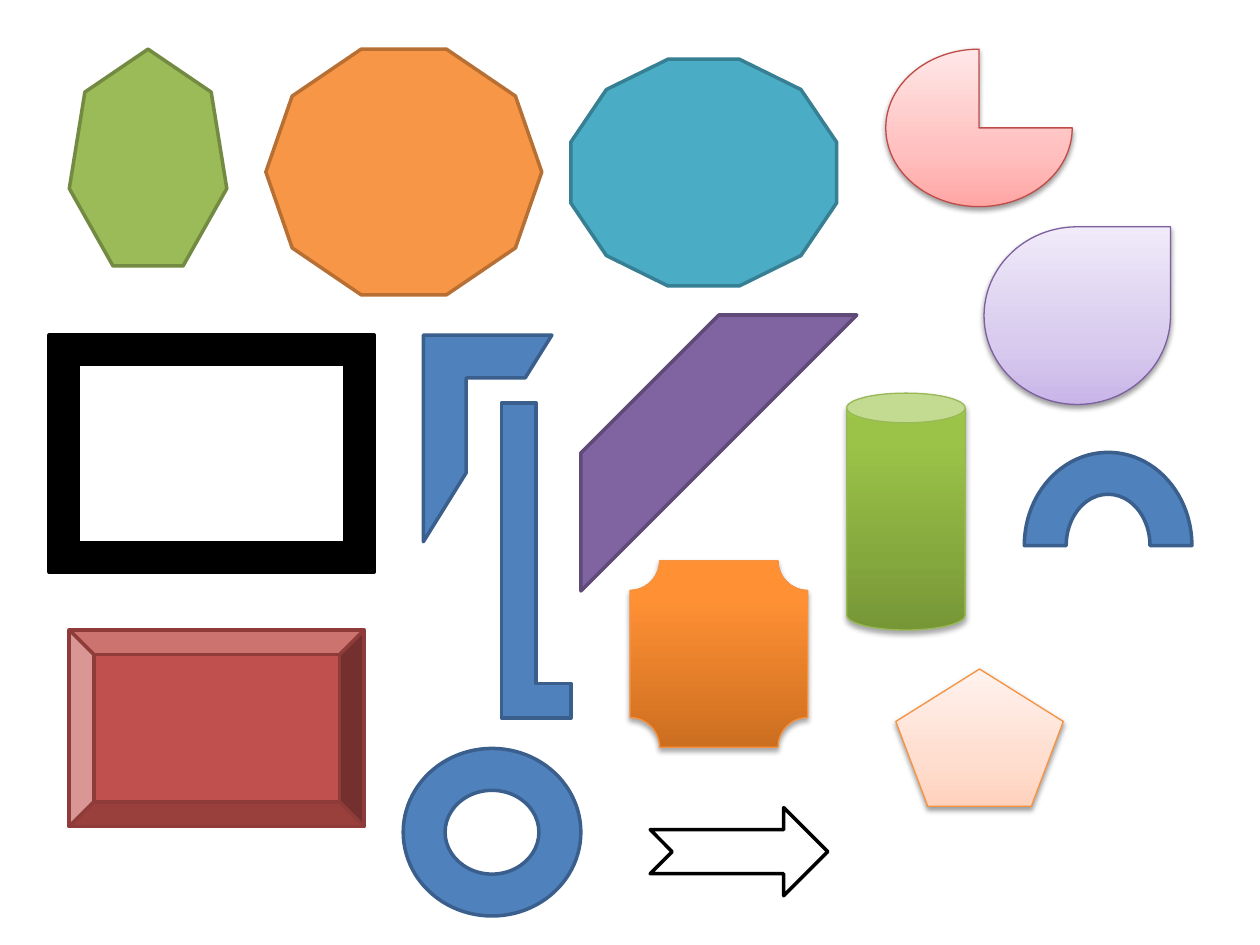
from copy import deepcopy
from dataclasses import dataclass
from typing import Optional

from lxml.etree import SubElement
from pptx import Presentation
from pptx.dml.color import RGBColor
from pptx.enum.shapes import MSO_SHAPE
from pptx.oxml.ns import qn
from pptx.util import Inches, Pt


@dataclass(frozen=True)
class Shadow:
    opacity: int  # percent
    distance: float  # points
    blur: float = 3.1  # points


@dataclass(frozen=True)
class Finish:
    """Fill stops run from bottom to top; a single stop is a solid fill."""
    stops: tuple[tuple[int, str], ...]
    line: str
    line_width: float = 2
    shadow: Optional[Shadow] = None


def solid(fill: str, line: str) -> Finish:
    return Finish(((0, fill),), line)


def subtle(bottom: str, middle: str, top: str, line: str) -> Finish:
    return Finish(((0, bottom), (35, middle), (100, top)), line, 0.75, Shadow(38, 1.6))


def intense(bottom: str, middle: str, top: str, line: str) -> Finish:
    return Finish(((0, bottom), (80, middle), (100, top)), line, 0.75, Shadow(35, 1.8))


@dataclass(frozen=True)
class Theme:
    blue: Finish = solid("4F81BD", "3A5F8C")
    red: Finish = solid("C0504D", "8E3B39")
    green: Finish = solid("9BBB59", "738A42")
    purple: Finish = solid("8064A2", "5F4A78")
    aqua: Finish = solid("4BACC6", "377F92")
    orange: Finish = solid("F79646", "B76F34")
    black: Finish = solid("000000", "000000")
    outline: Finish = solid("FFFFFF", "000000")
    soft_red: Finish = subtle("FFA6A5", "FFC0BF", "FFE7E7", "BF4C48")
    soft_purple: Finish = subtle("C9B5E8", "D8CBEE", "F0EAF9", "7D60A0")
    soft_orange: Finish = subtle("FFD2BD", "FFDED0", "FFF2ED", "F69240")
    deep_orange: Finish = intense("CC6E20", "FF9034", "FF9136", "F69240")
    deep_green: Finish = intense("779737", "9BC348", "9DC746", "98B955")


@dataclass(frozen=True)
class Figure:
    kind: MSO_SHAPE
    left: float
    top: float
    width: float
    height: float
    finish: Finish


THEME = Theme()

# Listed from back to front
FIGURES = [
    Figure(MSO_SHAPE.HEPTAGON, 0.55, 0.39, 1.25, 1.72, THEME.green),
    Figure(MSO_SHAPE.DECAGON, 2.11, 0.39, 2.19, 1.95, THEME.orange),
    Figure(MSO_SHAPE.DODECAGON, 4.53, 0.47, 2.11, 1.8, THEME.aqua),
    Figure(MSO_SHAPE.PIE, 7.03, 0.39, 1.48, 1.25, THEME.soft_red),
    Figure(MSO_SHAPE.TEAR, 7.81, 1.8, 1.48, 1.41, THEME.soft_purple),
    Figure(MSO_SHAPE.FRAME, 0.39, 2.66, 2.58, 1.88, THEME.black),
    Figure(MSO_SHAPE.HALF_FRAME, 3.36, 2.66, 1.02, 1.64, THEME.blue),
    Figure(MSO_SHAPE.CORNER, 3.98, 3.2, 0.55, 2.5, THEME.blue),
    Figure(MSO_SHAPE.DIAGONAL_STRIPE, 4.61, 2.5, 2.19, 2.19, THEME.purple),
    Figure(MSO_SHAPE.PLAQUE, 5, 4.45, 1.41, 1.48, THEME.deep_orange),
    Figure(MSO_SHAPE.CAN, 6.72, 3.12, 0.94, 1.88, THEME.deep_green),
    Figure(MSO_SHAPE.BEVEL, 0.55, 5, 2.34, 1.56, THEME.red),
    Figure(MSO_SHAPE.DONUT, 3.2, 5.94, 1.41, 1.33, THEME.blue),
    Figure(MSO_SHAPE.BLOCK_ARC, 8.13, 3.59, 1.33, 1.48, THEME.blue),
    Figure(MSO_SHAPE.NOTCHED_RIGHT_ARROW, 5.16, 6.41, 1.41, 0.7, THEME.outline),
    Figure(MSO_SHAPE.REGULAR_PENTAGON, 7.11, 5.31, 1.33, 1.09, THEME.soft_orange),
]


def apply_fill(shape, stops: tuple[tuple[int, str], ...]) -> None:
    fill = shape.fill
    if len(stops) == 1:
        fill.solid()
        fill.fore_color.rgb = RGBColor.from_string(stops[0][1])
        return
    fill.gradient()
    fill.gradient_angle = 90
    # The default gradient has two stops; add the missing ones
    stop_list = shape._element.spPr.find(".//" + qn("a:gsLst"))
    while len(stop_list) < len(stops):
        stop_list.append(deepcopy(stop_list[0]))
    for gradient_stop, (percent, color) in zip(fill.gradient_stops, stops):
        gradient_stop.position = percent / 100
        gradient_stop.color.rgb = RGBColor.from_string(color)


def apply_shadow(shape, shadow: Optional[Shadow]) -> None:
    shape.shadow.inherit = False
    if shadow is None:
        return
    effects = shape._element.spPr.find(qn("a:effectLst"))
    outer = SubElement(effects, qn("a:outerShdw"), blurRad=str(Pt(shadow.blur)),
                       dist=str(Pt(shadow.distance)), dir="5400000", rotWithShape="0")
    color = SubElement(outer, qn("a:srgbClr"), val="000000")
    SubElement(color, qn("a:alpha"), val=str(shadow.opacity * 1000))


def draw_figure(slide, figure: Figure) -> None:
    shape = slide.shapes.add_shape(
        figure.kind, Inches(figure.left), Inches(figure.top),
        Inches(figure.width), Inches(figure.height))
    finish = figure.finish
    apply_fill(shape, finish.stops)
    shape.line.color.rgb = RGBColor.from_string(finish.line)
    shape.line.width = Pt(finish.line_width)
    apply_shadow(shape, finish.shadow)


def main() -> None:
    presentation = Presentation()
    presentation.slide_width = Inches(10)
    presentation.slide_height = Inches(7.5)
    slide = presentation.slides.add_slide(presentation.slide_layouts[6])
    for figure in FIGURES:
        draw_figure(slide, figure)
    presentation.save("out.pptx")


if __name__ == "__main__":
    main()
